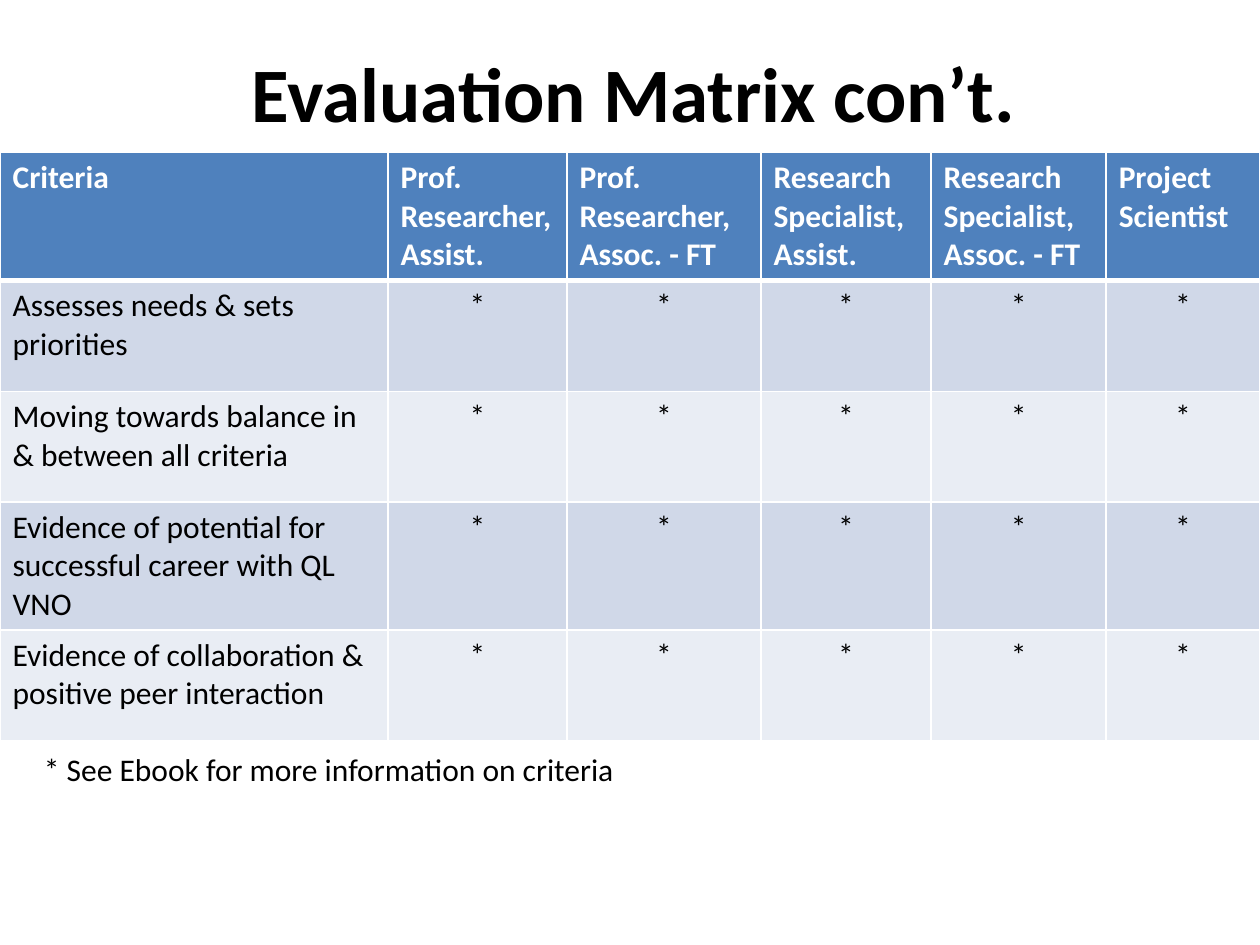
from lxml import etree
from pptx import Presentation
from pptx import util as u
from pptx.dml.color import RGBColor
from pptx.enum import text as t
from pptx.oxml import ns

COLORS = {"ink": "000000", "white": "FFFFFF", "header": "4F81BD",
          "odd": "D0D8E8", "even": "E9EDF4"}
COLUMN_WIDTHS = [3.08, 1.42, 1.54, 1.35, 1.39, 1.22]
ROW_HEIGHT = 0.88
HEADERS = ["Criteria", "Prof. Researcher, Assist.", "Prof. Researcher, Assoc. - FT",
           "Research Specialist, Assist.", "Research Specialist, Assoc. - FT",
           "Project Scientist"]
CRITERIA = ["Assesses needs & sets priorities",
            "Moving towards balance in & between all criteria",
            "Evidence of potential for successful career with QL VNO",
            "Evidence of collaboration & positive peer interaction"]


def write_text(frame, words, size=18, color="ink", bold=False, align=t.PP_ALIGN.LEFT):
    paragraph = frame.paragraphs[0]
    paragraph.alignment = align
    run = paragraph.add_run()
    run.text = words
    run.font.name = "Calibri"
    run.font.size = u.Pt(size)
    run.font.bold = bold
    run.font.color.rgb = RGBColor.from_string(COLORS[color])


class MatrixSlide:
    """Holds the style and the current slide."""

    def __init__(self, slide, border_color="white"):
        self.slide = slide
        self.border_color = border_color

    def text_box(self, words, left, top, width, height, wrap=True, **style):
        shape = self.slide.shapes.add_textbox(*map(u.Inches, (left, top, width, height)))
        shape.text_frame.word_wrap = wrap
        shape.text_frame.auto_size = t.MSO_AUTO_SIZE.SHAPE_TO_FIT_TEXT
        write_text(shape.text_frame, words, **style)

    def borders(self, cell, top=1, bottom=1):
        properties = cell._tc.get_or_add_tcPr()
        for side, width in (("L", 1), ("R", 1), ("T", top), ("B", bottom)):
            line = etree.SubElement(properties, ns.qn(f"a:ln{side}"), w=str(u.Pt(width)))
            fill = etree.SubElement(line, ns.qn("a:solidFill"))
            etree.SubElement(fill, ns.qn("a:srgbClr"), val=COLORS[self.border_color])

    def table(self, rows, left, top, widths, row_height):
        shape = self.slide.shapes.add_table(
            len(rows), len(widths), u.Inches(left), u.Inches(top),
            u.Inches(sum(widths)), u.Inches(row_height * len(rows)))
        table = shape.table
        for column, width in zip(table.columns, widths):
            column.width = u.Inches(width)
        for row_index, row in enumerate(rows):
            is_header = row_index == 0
            fill = "header" if is_header else ("even", "odd")[row_index % 2]
            for column_index, words in enumerate(row):
                cell = table.cell(row_index, column_index)
                # A thick rule separates the header from the body
                self.borders(cell, top=3 if row_index == 1 else 1,
                             bottom=3 if is_header else 1)
                cell.fill.solid()
                cell.fill.fore_color.rgb = RGBColor.from_string(COLORS[fill])
                centred = not is_header and column_index > 0
                write_text(cell.text_frame, words, bold=is_header,
                           color="white" if is_header else "ink",
                           align=t.PP_ALIGN.CENTER if centred else t.PP_ALIGN.LEFT)


def main():
    presentation = Presentation()
    presentation.slide_width = u.Inches(10)
    presentation.slide_height = u.Inches(7.5)
    page = MatrixSlide(presentation.slides.add_slide(presentation.slide_layouts[6]))

    # Evaluation matrix
    marks = ["*"] * (len(HEADERS) - 1)
    rows = [HEADERS] + [[criterion] + marks for criterion in CRITERIA]
    page.table(rows, 0, 1.21, COLUMN_WIDTHS, ROW_HEIGHT)

    # Title and footnote
    page.text_box("Evaluation Matrix con’t.", 1.9, 0.31, 9.23, 0.84, size=44, bold=True)
    page.text_box("* See Ebook for more information on criteria",
                  0.25, 5.9, 4.78, 0.4, wrap=False)

    presentation.save("out.pptx")


if __name__ == "__main__":
    main()
